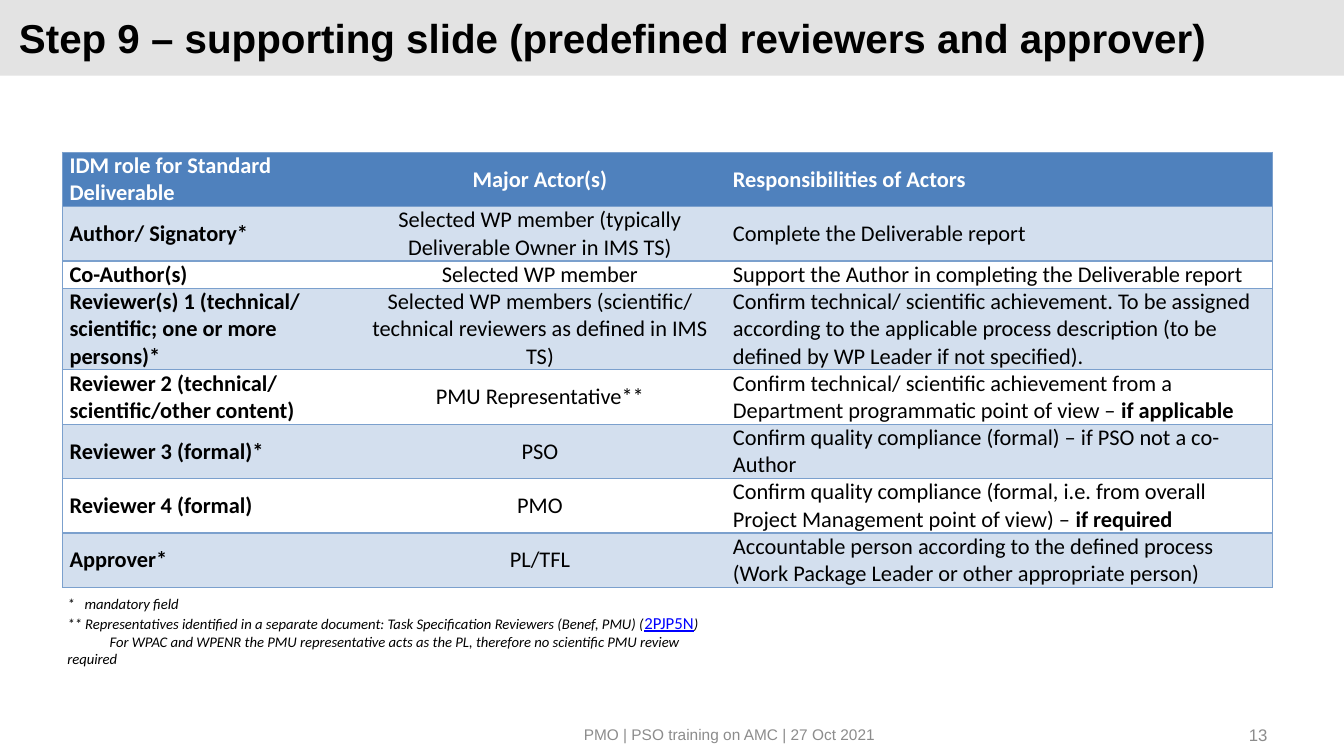
from lxml import etree
from pptx import Presentation
from pptx.dml.color import RGBColor
from pptx.enum.shapes import MSO_SHAPE
from pptx.enum.text import MSO_ANCHOR, MSO_AUTO_SIZE, PP_ALIGN
from pptx.oxml.ns import qn
from pptx.util import Inches, Pt

LEFT, CENTER, RIGHT = PP_ALIGN.LEFT, PP_ALIGN.CENTER, PP_ALIGN.RIGHT
MIDDLE, TOP = MSO_ANCHOR.MIDDLE, MSO_ANCHOR.TOP
RECTANGLE = MSO_SHAPE.RECTANGLE
GROW = MSO_AUTO_SIZE.SHAPE_TO_FIT_TEXT

COLORS = {
    "banner": "E3E3E3",
    "black": "000000",
    "white": "FFFFFF",
    "footer": "8C8C8C",
    "header": "4F81BD",
    "band": "D3DFEE",
    "border": "7BA0CD",
    "link": "0000FF",
}
COLUMN_WIDTHS = [2.89, 3.69, 5.42]
LINE_HEIGHT = 0.27
ROLES = [
    (2, "IDM role for Standard Deliverable", "Major Actor(s)", "Responsibilities of Actors", ""),
    (2, "Author/ Signatory*", "Selected WP member (typically Deliverable Owner in IMS TS)",
     "Complete the Deliverable report", ""),
    (1, "Co-Author(s)", "Selected WP member",
     "Support the Author in completing the Deliverable report", ""),
    (3, "Reviewer(s) 1 (technical/ scientific; one or more persons)*",
     "Selected WP members (scientific/ technical reviewers as defined in IMS TS)",
     "Confirm technical/ scientific achievement. To be assigned according to the applicable "
     "process description (to be defined by WP Leader if not specified).", ""),
    (2, "Reviewer 2 (technical/ scientific/other content)", "PMU Representative**",
     "Confirm technical/ scientific achievement from a Department programmatic point of view – ",
     "if applicable"),
    (2, "Reviewer 3 (formal)*", "PSO",
     "Confirm quality compliance (formal) – if PSO not a co-Author", ""),
    (2, "Reviewer 4 (formal)", "PMO",
     "Confirm quality compliance (formal, i.e. from overall Project Management point of view) – ",
     "if required"),
    (2, "Approver*", "PL/TFL",
     "Accountable person according to the defined process "
     "(Work Package Leader or other appropriate person)", ""),
]


def color(name):
    """Return the named colour."""
    return RGBColor.from_string(COLORS[name])


def set_font(font, size, tint, name="Calibri", bold=False, italic=False):
    """Set the look of a paragraph or run font."""
    font.size, font.name = Pt(size), name
    font.bold, font.italic = bold, italic
    font.color.rgb = color(tint)


def add_box(page, left, top, width, height, anchor=MIDDLE):
    """Add a wrapping text box and return its text frame."""
    box = page.shapes.add_textbox(Inches(left), Inches(top), Inches(width), Inches(height))
    frame = box.text_frame
    frame.word_wrap = True
    frame.vertical_anchor = anchor
    return frame


def add_label(page, place, text, size, tint, align=LEFT, bold=False):
    """Add a single line of Arial text."""
    para = add_box(page, *place).paragraphs[0]
    para.text = text
    para.alignment = align
    set_font(para.font, size, tint, "Arial", bold)
    return para


def add_banner(page):
    """Add the grey title bar and the title."""
    bar = page.shapes.add_shape(RECTANGLE, 0, 0, Inches(13.33), Inches(0.75))
    bar.shadow.inherit = False
    bar.fill.solid()
    bar.fill.fore_color.rgb = color("banner")
    bar.line.fill.background()
    title = add_label(page, (0.09, 0.14, 12.36, 0.5),
                      "Step 9 – supporting slide (predefined reviewers and approver)",
                      28.8, "black", bold=True)
    title.line_spacing = Pt(32)


def set_borders(cell, column):
    """Draw horizontal rules and only the outer vertical edges."""
    visible = {"lnL": column == 0, "lnR": column == len(COLUMN_WIDTHS) - 1,
               "lnT": True, "lnB": True}
    properties = cell._tc.get_or_add_tcPr()
    for index, (side, shown) in enumerate(visible.items()):
        line = etree.Element(qn(f"a:{side}"), w=str(Pt(1)))
        fill = etree.SubElement(line, qn("a:solidFill" if shown else "a:noFill"))
        if shown:
            etree.SubElement(fill, qn("a:srgbClr"), val=COLORS["border"])
        properties.insert(index, line)


def fill_cell(cell, row, column, text, ending):
    """Write and style one table cell."""
    cell.margin_left = cell.margin_right = Inches(0.07)
    cell.margin_top = cell.margin_bottom = 0
    cell.vertical_anchor = MIDDLE
    if row == 0 or row % 2:
        cell.fill.solid()
        cell.fill.fore_color.rgb = color("band" if row else "header")
    else:
        cell.fill.background()
    set_borders(cell, column)
    para = cell.text_frame.paragraphs[0]
    para.text = text
    para.alignment = CENTER if column == 1 else LEFT
    set_font(para.font, 16, "black" if row else "white", bold=row == 0 or column == 0)
    if ending:
        span = para.add_run()
        span.text = ending
        span.font.bold = True


def add_roles(page):
    """Add the table of roles, actors and responsibilities."""
    height = LINE_HEIGHT * sum(role[0] for role in ROLES)
    table = page.shapes.add_table(len(ROLES), len(COLUMN_WIDTHS), Inches(0.62), Inches(1.51),
                                  Inches(sum(COLUMN_WIDTHS)), Inches(height)).table
    table.horz_banding = False
    for column, width in zip(table.columns, COLUMN_WIDTHS):
        column.width = Inches(width)
    for row, (lines, *texts, ending) in enumerate(ROLES):
        table.rows[row].height = Inches(LINE_HEIGHT * lines)
        for column, text in enumerate(texts):
            fill_cell(table.cell(row, column), row, column, text, ending if column == 2 else "")


def add_footnotes(page):
    """Add the notes below the table."""
    frame = add_box(page, 0.57, 5.85, 6.57, 0.66, TOP)
    frame.auto_size = GROW
    mandatory, document, exception = (
        frame.paragraphs[0], frame.add_paragraph(), frame.add_paragraph())

    tabs = etree.SubElement(mandatory._p.get_or_add_pPr(), qn("a:tabLst"))
    etree.SubElement(tabs, qn("a:tab"), pos=str(Inches(0.17)), algn="l")
    mandatory.add_run().text = "*\tmandatory field"
    set_font(mandatory.font, 10.5, "black", italic=True)

    for text in ("** Representatives identified in a separate document: "
                 "Task Specification Reviewers (Benef, PMU) (", "2PJP5N", ")"):
        span = document.add_run()
        span.text = text
        linked = text == "2PJP5N"
        set_font(span.font, 12 if linked else 10.5, "link" if linked else "black",
                 italic=not linked)
        span.font.underline = linked

    exception._p.get_or_add_pPr().set("indent", str(Inches(0.42)))
    exception.text = ("For WPAC and WPENR the PMU representative acts as the PL, "
                      "therefore no scientific PMU review required")
    set_font(exception.font, 10.5, "black", italic=True)


def main():
    """Build the slide and save it."""
    deck = Presentation()
    deck.slide_width, deck.slide_height = Inches(13.33), Inches(7.5)
    page = deck.slides.add_slide(deck.slide_layouts[6])
    add_banner(page)
    add_label(page, (4.56, 7.09, 4.22, 0.4), "PMO | PSO training on AMC | 27 Oct 2021",
              11, "footer", RIGHT)
    add_label(page, (9.56, 7.09, 3.11, 0.4), "13", 12, "footer", RIGHT)
    add_roles(page)
    add_footnotes(page)
    deck.save("out.pptx")


if __name__ == "__main__":
    main()
